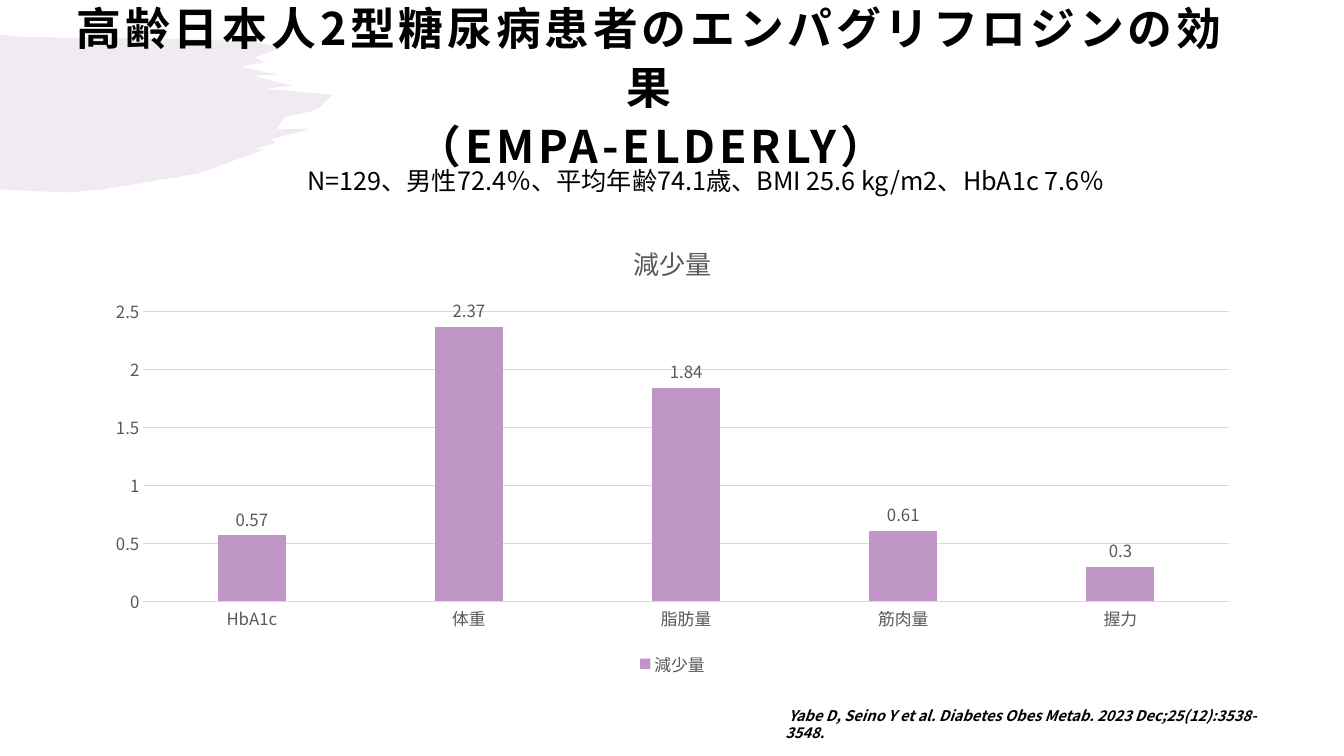
from lxml import etree
from pptx import Presentation
from pptx.chart.data import CategoryChartData
from pptx.dml.color import RGBColor
from pptx.enum.chart import XL_CHART_TYPE as ChartType
from pptx.enum.chart import XL_LABEL_POSITION as LabelPosition
from pptx.enum.chart import XL_LEGEND_POSITION as LegendPosition
from pptx.enum.chart import XL_TICK_MARK as TickMark
from pptx.enum.text import MSO_ANCHOR as Anchor
from pptx.enum.text import MSO_AUTO_SIZE as AutoSize
from pptx.enum.text import PP_ALIGN as Align
from pptx.oxml.ns import qn
from pptx.util import Inches, Pt

FONT = "Noto Sans CJK JP"
COLORS = {"black": "000000", "gray": "595959", "grid": "D9D9D9", "purple": "BF96C6"}

# Brush stroke outline in inches, clockwise from the top left.
BRUSH_OUTLINE = [
    (0, 0.34), (0.25, 0.37), (1.5, 0.38), (2.48, 0.41), (2.8, 0.47), (2.53, 0.57),
    (2.62, 0.62), (2.38, 0.66), (2.75, 0.74), (2.51, 0.75), (2.73, 0.81),
    (2.9, 0.85), (2.63, 0.88), (3.3, 0.94), (3.18, 1.06), (3.07, 1.11),
    (2.83, 1.16), (2.74, 1.28), (3.08, 1.28), (2.69, 1.38), (2.73, 1.42),
    (2.52, 1.48), (2.63, 1.48), (1.97, 1.72), (1.02, 1.88), (0.65, 1.91), (0, 1.88),
]


class SlideBuilder:
    def __init__(self, slide):
        self.slide = slide

    def color(self, name):
        return RGBColor.from_string(COLORS[name])

    def style_font(self, font, size, color="black", bold=False, italic=False):
        font.size = Pt(size)
        font.bold = bold
        font.italic = italic
        font.color.rgb = self.color(color)
        font.name = FONT
        # East Asian glyphs take their typeface from a separate element.
        etree.SubElement(font._rPr, qn("a:ea")).set("typeface", FONT)

    def brush(self, outline, color, opacity):
        start, *points = [tuple(map(Inches, point)) for point in outline]
        freeform = self.slide.shapes.build_freeform(*start)
        freeform.add_line_segments(points, close=True)
        shape = freeform.convert_to_shape()
        shape.shadow.inherit = False
        shape.line.fill.background()
        shape.fill.solid()
        shape.fill.fore_color.rgb = self.color(color)
        color_element = shape._element.spPr.find(qn("a:solidFill"))[0]
        etree.SubElement(color_element, qn("a:alpha")).set("val", str(opacity * 1000))

    def text(self, text, left, top, width, height, size, bold=False, italic=False):
        shape = self.slide.shapes.add_textbox(*map(Inches, (left, top, width, height)))
        frame = shape.text_frame
        frame.word_wrap = True
        frame.auto_size = AutoSize.SHAPE_TO_FIT_TEXT
        frame.text = text
        for run in frame.paragraphs[0].runs:
            self.style_font(run.font, size, bold=bold, italic=italic)
        return frame

    def title(self, text, left, top, width, height, size, spacing):
        frame = self.text(text, left, top, width, height, size, bold=True)
        frame.auto_size = AutoSize.NONE
        frame.vertical_anchor = Anchor.MIDDLE
        frame.margin_left = frame.margin_right = frame.margin_top = Inches(0.12)
        frame.margin_bottom = Inches(0.1)
        paragraph = frame.paragraphs[0]
        paragraph.alignment = Align.CENTER
        paragraph.line_spacing = 1.1
        for run in paragraph.runs:
            run._r.get_or_add_rPr().set("spc", str(round(spacing * 100)))

    def column_chart(self, name, values, left, top, width, height):
        data = CategoryChartData()
        data.categories = list(values)
        data.add_series(name, list(values.values()))
        chart = self.slide.shapes.add_chart(
            ChartType.COLUMN_CLUSTERED, *map(Inches, (left, top, width, height)), data).chart
        self.style_font(chart.font, 10)

        chart.has_title = True
        title_frame = chart.chart_title.text_frame
        title_frame.text = name
        self.style_font(title_frame.paragraphs[0].runs[0].font, 18.6, "gray")
        chart.has_legend = True
        chart.legend.position = LegendPosition.BOTTOM
        chart.legend.include_in_layout = False
        self.style_font(chart.legend.font, 12, "gray")

        for axis in (chart.category_axis, chart.value_axis):
            axis.major_tick_mark = axis.minor_tick_mark = TickMark.NONE
            self.style_font(axis.tick_labels.font, 12, "gray")
        value_axis = chart.value_axis
        value_axis.minimum_scale, value_axis.maximum_scale = 0, 2.5
        value_axis.major_unit = 0.5
        value_axis.format.line.fill.background()
        for line in (chart.category_axis.format.line, value_axis.major_gridlines.format.line):
            line.color.rgb = self.color("grid")
            line.width = Pt(0.75)

        plot = chart.plots[0]
        plot.vary_by_categories = False
        plot.gap_width, plot.overlap = 219, -27
        series = plot.series[0]
        series.format.fill.solid()
        series.format.fill.fore_color.rgb = self.color("purple")
        labels = series.data_labels
        labels.show_value = True
        labels.position = LabelPosition.OUTSIDE_END
        self.style_font(labels.font, 12, "gray")


def main():
    presentation = Presentation()
    presentation.slide_width = Inches(13.33)
    presentation.slide_height = Inches(7.5)
    builder = SlideBuilder(presentation.slides.add_slide(presentation.slide_layouts[6]))

    builder.brush(BRUSH_OUTLINE, "purple", opacity=20)
    builder.title("高齢日本人2型糖尿病患者のエンパグリフロジンの効果\v（EMPA-ELDERLY）",
                  0.48, 0.27, 11.96, 1.1, size=32, spacing=2.7)
    reductions = {"HbA1c": 0.57, "体重": 2.37, "脂肪量": 1.84, "筋肉量": 0.61, "握力": 0.3}
    builder.column_chart("減少量", reductions, 0.92, 2.2, 11.5, 4.55)
    builder.text(" Yabe D, Seino Y et al. Diabetes Obes Metab. 2023 Dec;25(12):3538-3548.",
                 7.69, 6.96, 5.03, 0.28, size=10.5, bold=True, italic=True)
    builder.text("N=129、男性72.4％、平均年齢74.1歳、BMI 25.6 kg/m2、HbA1c 7.6％",
                 2.95, 1.59, 8.17, 0.4, size=18)
    presentation.save("out.pptx")


if __name__ == "__main__":
    main()
